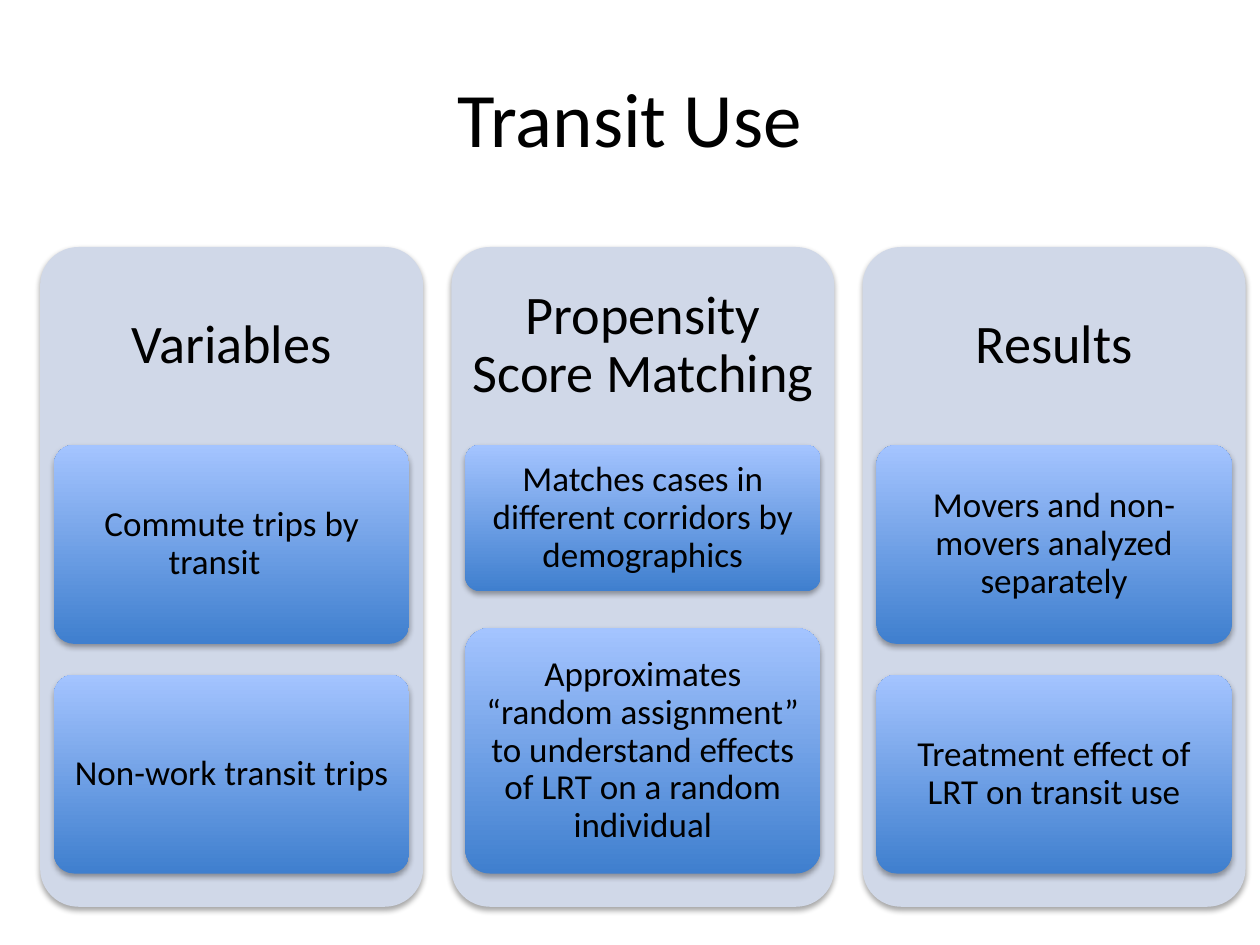
from dataclasses import dataclass

from lxml import etree
from pptx import Presentation
from pptx import util as u
from pptx.dml.color import RGBColor
from pptx.enum import shapes, text
from pptx.oxml.ns import qn

BLACK = RGBColor(0x00, 0x00, 0x00)
PALE = RGBColor(0xD0, 0xD8, 0xE8)
DARK = RGBColor(0x3F, 0x7F, 0xCE)
LIGHT = RGBColor(0xA4, 0xC4, 0xFF)
FONT = "Calibri"

# Column grid, in cm
LEFT, TOP, PITCH = 0.81, 4.98, 8.29
WIDTH, HEIGHT, HEAD = 7.72, 13.3, 3.99
INSET, BOX_TOP, BOX_END = 0.28, 8.97, 17.61


@dataclass
class Box:
    label: str
    height: float = 4.01


@dataclass
class Column:
    head: str
    upper: Box
    lower: Box


COLUMNS = [
    Column("Variables", Box("Commute trips by transit\t"),
           Box("Non-work transit trips")),
    Column("Propensity Score Matching",
           Box("Matches cases in different corridors by demographics", 2.95),
           Box("Approximates “random assignment” to understand effects "
               "of LRT on a random individual", 4.95)),
    Column("Results", Box("Movers and non-movers analyzed separately"),
           Box("Treatment effect of LRT on transit use")),
]


def write(shape, words: str, size: float, pad_x: float, pad_y: float,
          lines: float = 0.9) -> None:
    """Put one centred paragraph into a shape."""
    frame = shape.text_frame
    frame.text = words
    frame.word_wrap = True
    frame.vertical_anchor = text.MSO_ANCHOR.MIDDLE
    frame.margin_left = frame.margin_right = u.Cm(pad_x)
    frame.margin_top = frame.margin_bottom = u.Cm(pad_y)
    para = frame.paragraphs[0]
    para.alignment = text.PP_ALIGN.CENTER
    para.line_spacing = lines
    for run in para.runs:
        run.font.name = FONT
        run.font.size = u.Pt(size)
        run.font.color.rgb = BLACK


def shade(shape) -> None:
    """Give a shape a soft shadow straight below it."""
    shape.shadow.inherit = False
    effects = shape._element.spPr.find(qn("a:effectLst"))
    outer = etree.SubElement(effects, qn("a:outerShdw"), blurRad="40000",
                             dist="23000", dir="5400000", rotWithShape="0")
    color = etree.SubElement(outer, qn("a:srgbClr"), val="000000")
    etree.SubElement(color, qn("a:alpha"), val="35000")


def card(slide, x: float, y: float, width: float, height: float):
    """Add a rounded card with no outline."""
    shape = slide.shapes.add_shape(
        shapes.MSO_SHAPE.ROUNDED_RECTANGLE,
        u.Cm(x), u.Cm(y), u.Cm(width), u.Cm(height))
    shape.adjustments[0] = 0.1
    shape.line.fill.background()
    shade(shape)
    return shape


def draw_box(slide, box: Box, x: float, y: float) -> None:
    shape = card(slide, x + INSET, y, WIDTH - 2 * INSET, box.height)
    shape.fill.gradient()
    shape.fill.gradient_angle = 90
    for stop, color in zip(shape.fill.gradient_stops, (DARK, LIGHT)):
        stop.color.rgb = color
    write(shape, box.label, 20, 0.14, 0.11)


def draw_column(slide, column: Column, x: float) -> None:
    panel = card(slide, x, TOP, WIDTH, HEIGHT)
    panel.fill.solid()
    panel.fill.fore_color.rgb = PALE
    head = slide.shapes.add_textbox(u.Cm(x), u.Cm(TOP), u.Cm(WIDTH), u.Cm(HEAD))
    write(head, column.head, 31, 0.33, 0.33)
    draw_box(slide, column.upper, x, BOX_TOP)
    draw_box(slide, column.lower, x, BOX_END - column.lower.height)


def main() -> None:
    deck = Presentation()
    deck.slide_width, deck.slide_height = u.Cm(25.4), u.Cm(19.05)
    slide = deck.slides.add_slide(deck.slide_layouts[5])

    # Title
    title = slide.shapes.title
    title.left, title.top = u.Cm(1.27), u.Cm(0.76)
    title.width, title.height = u.Cm(22.86), u.Cm(3.18)
    write(title, "Transit Use", 44, 0.25, 0.13, 1.0)

    # Three columns of cards
    for index, column in enumerate(COLUMNS):
        draw_column(slide, column, LEFT + index * PITCH)

    deck.save("out.pptx")


if __name__ == "__main__":
    main()
